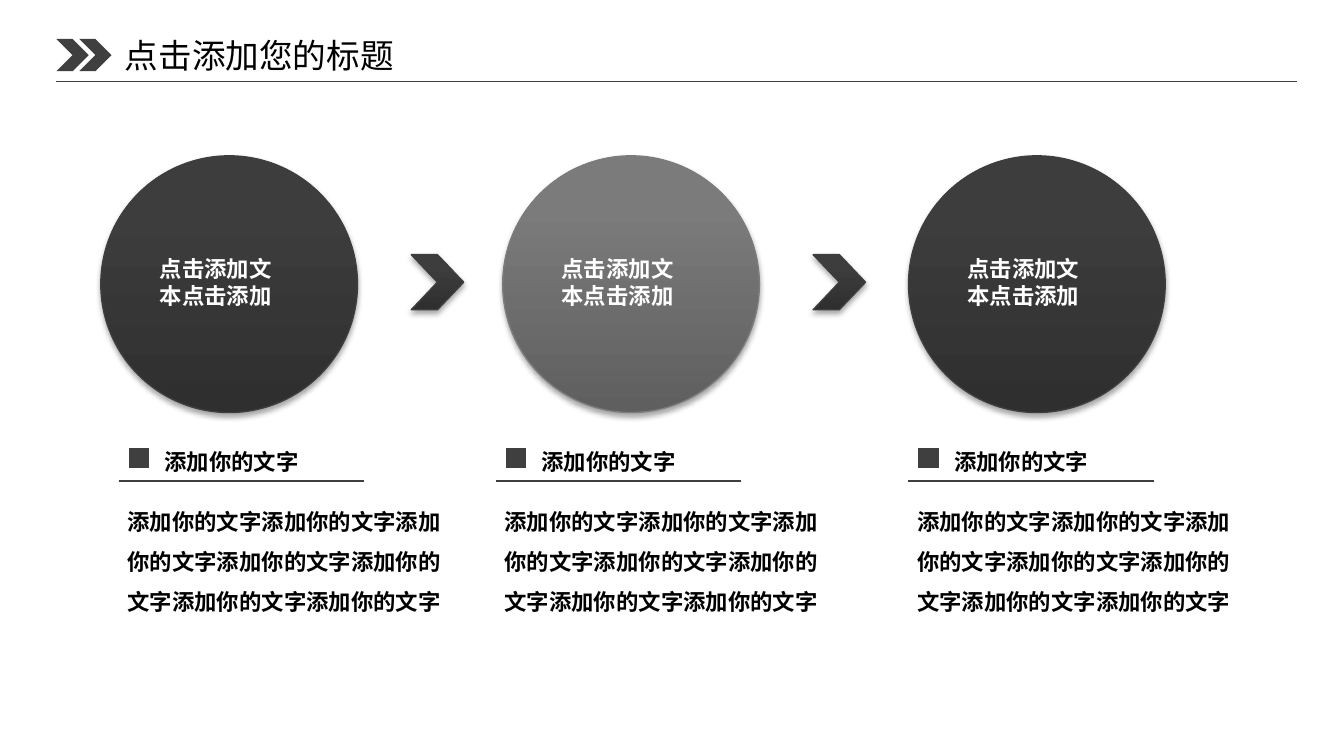
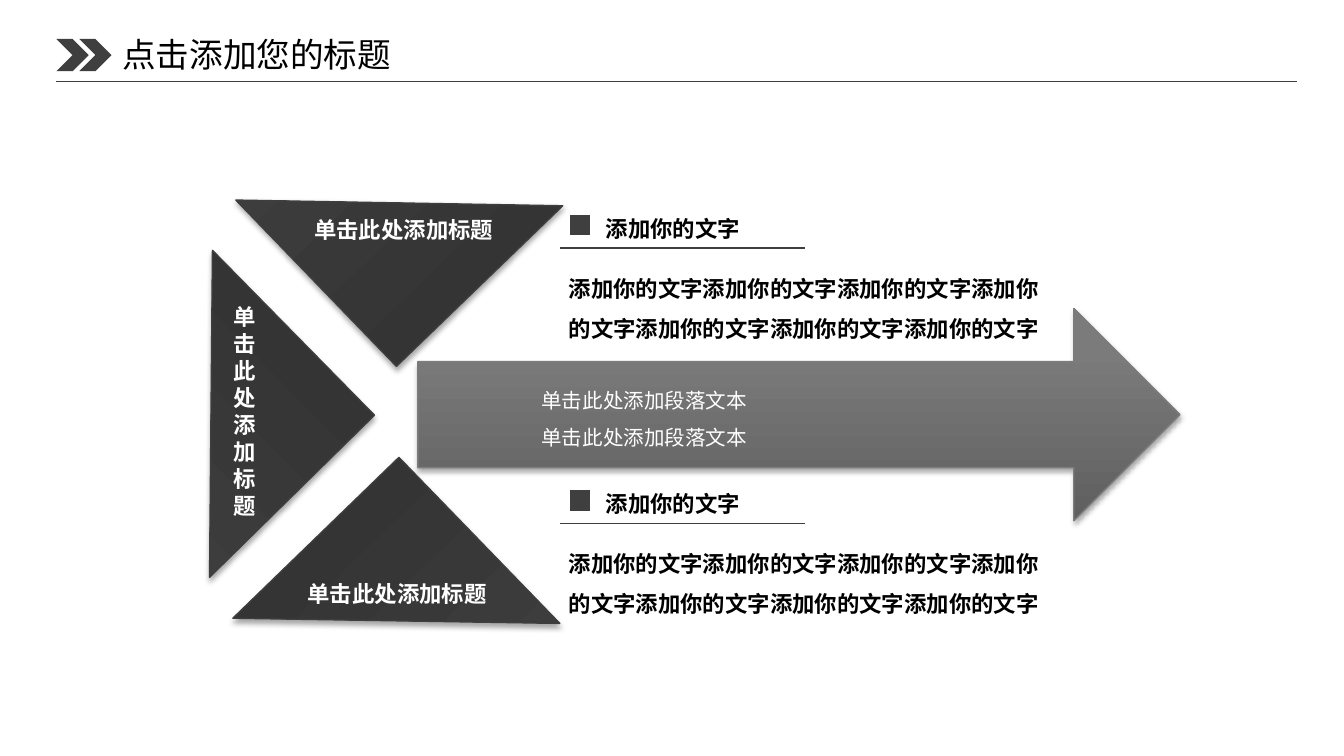
from dataclasses import dataclass
from lxml.etree import SubElement
from pptx import Presentation
from pptx.dml.color import RGBColor
from pptx.enum.shapes import MSO_CONNECTOR, MSO_SHAPE
from pptx.enum.text import MSO_ANCHOR, MSO_AUTO_SIZE, PP_ALIGN
from pptx.oxml.ns import qn
from pptx.util import Inches, Pt


@dataclass(frozen=True)
class Theme:
    """Colours, gradients, font and type sizes of the deck."""
    font: str = "Noto Sans CJK SC"
    ink: str = "000000"
    paper: str = "FFFFFF"
    solid: str = "3F3F3F"
    rule: str = "3E3E3E"
    dark: tuple = ("2F2F2F", "3D3D3D", "3D3D3D", "3E3E3E")
    mid: tuple = ("5F5F5F", "7B7B7B", "7C7C7C", "7C7C7C")
    title: int = 18
    body: int = 12
    small: int = 11
    hair: float = 0.75


T = Theme()
WIDTH = Inches(10)
HEIGHT = WIDTH * 9 // 16
COLUMNS = 100
TITLE = "点击添加您的标题"
PHRASE = "添加你的文字"
CALL = "单击此处添加标题"


def u(n):
    """Length of n grid columns; rows are as tall as columns are wide."""
    return round(WIDTH / COLUMNS * n)


def put(obj, values):
    """Set each attribute named in a dict of format values."""
    for name, value in values.items():
        setattr(obj, name, value)


def write(sp, lines, size=T.body, color=T.ink, bold=True, wrap=True,
          align=PP_ALIGN.LEFT, spacing=None):
    """Fill a shape with formatted paragraphs."""
    tf = sp.text_frame
    put(tf, {"word_wrap": wrap, "auto_size": MSO_AUTO_SIZE.SHAPE_TO_FIT_TEXT,
             "vertical_anchor": MSO_ANCHOR.TOP})
    for i, line in enumerate(lines):
        p = tf.add_paragraph() if i else tf.paragraphs[0]
        put(p, {"alignment": align, "line_spacing": spacing})
        r = p.add_run()
        r.text = line
        put(r.font, {"size": Pt(size), "bold": bold, "name": T.font})
        r.font.color.rgb = RGBColor.from_string(color)
        SubElement(r.font._element, qn("a:ea"), typeface=T.font)


def text(s, box, lines, **style):
    """Add a text box at a grid box."""
    write(s.shapes.add_textbox(*map(u, box)), lines, **style)


def rule(s, x, y, w):
    """Draw a thin horizontal line."""
    c = s.shapes.add_connector(MSO_CONNECTOR.STRAIGHT, u(x), u(y), u(x + w), u(y))
    c.line.color.rgb = RGBColor.from_string(T.rule)
    c.line.width = Pt(T.hair)
    SubElement(c._element.spPr, qn("a:effectLst"))
    return c


def flat(s, kind, box, outline=None):
    """Add a solid shape, with an outline if a colour is given."""
    sp = s.shapes.add_shape(kind, *map(u, box))
    sp.shadow.inherit = False
    sp.fill.solid()
    sp.fill.fore_color.rgb = RGBColor.from_string(T.solid)
    if outline:
        sp.line.color.rgb = RGBColor.from_string(outline)
        sp.line.width = Pt(2)
    else:
        sp.line.fill.background()
    return sp


def glossy(s, kind, box, tones=T.dark):
    """Add a shape with a vertical gradient and a soft shadow."""
    sp = s.shapes.add_shape(kind, *map(u, box))
    sp.fill.gradient()
    sp.fill.gradient_angle = 90
    sp.line.color.rgb = RGBColor.from_string(tones[3])
    sp.line.width = Pt(T.hair)
    sp.shadow.inherit = False
    spPr = sp._element.spPr
    stops = spPr.find(qn("a:gradFill")).find(qn("a:gsLst"))
    for stop in list(stops):
        stops.remove(stop)
    for pos, tone in zip((0, 80, 100), tones):
        gs = SubElement(stops, qn("a:gs"), pos=str(pos * 1000))
        SubElement(gs, qn("a:srgbClr"), val=tone)
    shadow = SubElement(spPr.find(qn("a:effectLst")), qn("a:outerShdw"),
                        blurRad=str(Pt(3.1)), dist=str(Pt(1.8)),
                        dir="5400000", rotWithShape="0")
    black = SubElement(shadow, qn("a:srgbClr"), val=T.ink)
    SubElement(black, qn("a:alpha"), val="35000")
    return sp


def header(layout, s):
    """Build the double chevron and rule and move them to the layout."""
    for ph in list(layout.placeholders):
        if ph.placeholder_format.idx:
            ph._element.getparent().remove(ph._element)
    marks = [flat(s, MSO_SHAPE.CHEVRON, (x, 2.9, 2.4, 2.4)) for x in (4.2, 5.9)]
    for sp in marks + [rule(s, 4.2, 6.05, 92.3)]:
        layout.shapes._spTree.append(sp._element)


def title(s, x, y):
    """Place the slide title."""
    sp = s.shapes.title
    put(sp, {"left": u(x), "top": u(y), "width": u(22.2), "height": u(4)})
    write(sp, [TITLE], size=T.title, bold=False, wrap=False)


def topic(s, x, y, w, h):
    """Place a square-marked heading, its rule and a paragraph below."""
    flat(s, MSO_SHAPE.RECTANGLE, (x + 0.95, y + 0.35, 1.8, 1.8), T.paper)
    rule(s, x + 0.33, y + 2.95, 18.25)
    text(s, (x + 2.75, y, 12.1, 3), [PHRASE], wrap=False)
    text(s, (x, y + 3.45, w, h), [PHRASE * 7], spacing=1.5)


def disc(s, x, y, size, tones):
    """Place a captioned circle."""
    glossy(s, MSO_SHAPE.OVAL, (x, y, size, size), tones)
    text(s, (x + 3.4, y + 6.9, 10.9, 5), ["点击添加文本点击添加"], color=T.paper)


def process_slide(s):
    """Three circles linked by chevrons, with a topic under each."""
    title(s, 8.3, 2.1)
    discs = (7.5, 37.4, 67.6)
    for x, tones in zip(discs, (T.dark, T.mid, T.dark)):
        disc(s, x, 11.6, 19.1, tones)
    for x in discs[:-1]:
        glossy(s, MSO_SHAPE.CHEVRON, (x + 23.1, 18.95, 3.9, 4.1))
    for x in (8.5, 36.55, 67.25):
        topic(s, x, 32.85, 26, 10.1)


def triangle(s, x, y, turn):
    """Place a right triangle, mirrored both ways and turned."""
    sp = glossy(s, MSO_SHAPE.RIGHT_TRIANGLE, (x, y, 17.2, 17.2))
    sp.rotation = turn
    for axis in ("flipH", "flipV"):
        sp._element.spPr.find(qn("a:xfrm")).set(axis, "1")


def arrow_slide(s):
    """Three triangles feeding one wide arrow between two topics."""
    title(s, 8.1, 2)
    for place in ((7.1, 22.2, 45.5), (21.1, 6.5, 136), (20.9, 37.6, 315.9)):
        triangle(s, *place)
    glossy(s, MSO_SHAPE.RIGHT_ARROW, (31.1, 22.95, 56.7, 15.8), T.mid)
    for box in ((21.6, 15.6, 16.9, 3.1), (16.4, 22.1, 2.6, 17.5),
                (19.9, 42.7, 19.3, 3.1)):
        text(s, box, [CALL], color=T.paper, align=PP_ALIGN.CENTER)
    text(s, (39.3, 27.45, 23.6, 6.6), ["单击此处添加段落文本"] * 2,
         size=T.small, color=T.paper, bold=False, spacing=1.5)
    for y in (15.5, 36):
        topic(s, 41.33, y, 37, 7.1)


def main():
    """Build the deck and save it."""
    prs = Presentation()
    put(prs, {"slide_width": WIDTH, "slide_height": HEIGHT})
    prs.element.find(qn("p:sldSz")).set("type", "screen16x9")
    layout = prs.slide_layouts[5]
    slides = [prs.slides.add_slide(layout) for _ in range(2)]
    header(layout, slides[0])
    for s, build in zip(slides, (process_slide, arrow_slide)):
        build(s)
    prs.save("out.pptx")


if __name__ == "__main__":
    main()
